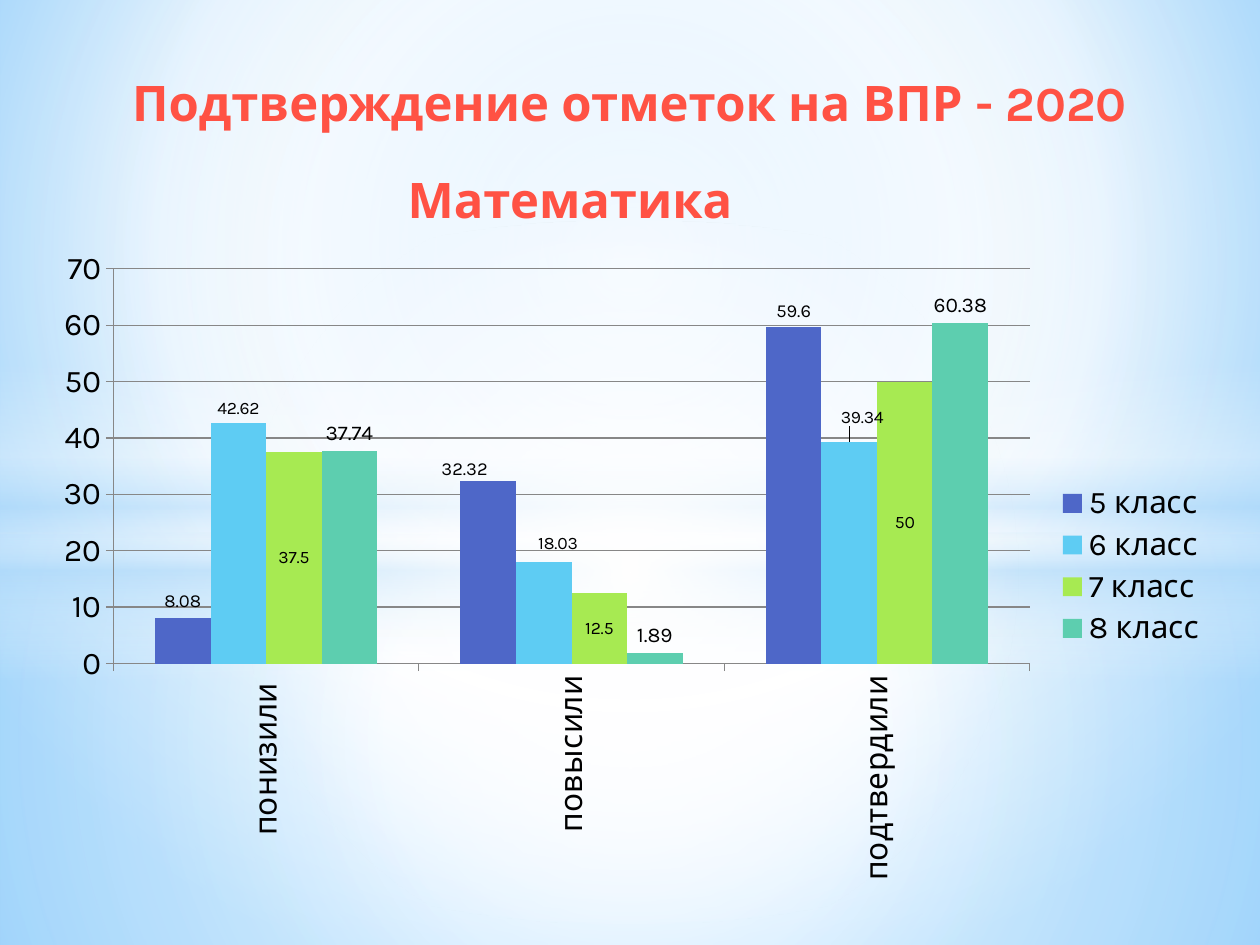
"""Build the slide on confirmed marks in mathematics, with a clustered column chart."""
from lxml import etree
from pptx import Presentation
from pptx.chart.data import CategoryChartData
from pptx.dml.color import RGBColor
from pptx.enum.chart import XL_CHART_TYPE, XL_LABEL_POSITION, XL_LEGEND_POSITION, XL_TICK_MARK
from pptx.enum.shapes import MSO_SHAPE
from pptx.enum.text import MSO_ANCHOR, MSO_AUTO_SIZE, PP_ALIGN
from pptx.oxml import parse_xml
from pptx.oxml.ns import nsdecls, qn
from pptx.util import Emu, Pt

RECT, OVAL = MSO_SHAPE.RECTANGLE, MSO_SHAPE.OVAL
ABOVE, CENTER = XL_LABEL_POSITION.OUTSIDE_END, XL_LABEL_POSITION.CENTER
COLUMNS, OUTSIDE = XL_CHART_TYPE.COLUMN_CLUSTERED, XL_TICK_MARK.OUTSIDE
FONT = "Karla"
HEADING = RGBColor(0xFF, 0x52, 0x44)
BLACK = RGBColor(0, 0, 0)
GRID = RGBColor(0x87, 0x87, 0x87)
INDIGO = RGBColor(0x4E, 0x67, 0xC8)
SKY = RGBColor(0x5E, 0xCC, 0xF3)
LIME = RGBColor(0xA7, 0xEA, 0x52)
TEAL = RGBColor(0x5D, 0xCE, 0xAF)
WHITE = RGBColor(0xFF, 0xFF, 0xFF)
PALE = RGBColor(0xB4, 0xDC, 0xFA)
LIGHT_BLUE = RGBColor(0x9E, 0xD5, 0xFF)
DEEP_BLUE = RGBColor(0x5B, 0xB9, 0xFF)

TITLE = ("Подтверждение отметок на ВПР - 2020", (84, 66, 1091, 72))
SUBJECT = ("Математика", (223, 163, 694, 72))
BACKDROP = [(0, LIGHT_BLUE, 100), (60, WHITE, 100), (100, DEEP_BLUE, 100)]
MIDDLE = (50, 50, 50, 50)
GLOWS = [
    (RECT, (0, 533, 1260, 412), [(0, WHITE, 91), (37, WHITE, 76), (100, PALE, 79)], MIDDLE),
    (RECT, (0, 0, 1260, 533), [(0, WHITE, 89), (48, WHITE, 62), (100, PALE, 79)], MIDDLE),
    (RECT, (0, 365, 1260, 315), [(0, WHITE, 0), (29, WHITE, 30), (45, PALE, 40),
                                 (55, WHITE, 26), (65, PALE, 60), (100, WHITE, 0)], None),
    (OVAL, (0, 221, 1260, 703), [(0, WHITE, 100), (54, WHITE, 0)], MIDDLE),
]
CHART_BOX = (39, 238, 1181, 656)
PLOT_BOX = (113, 269, 916, 395)
LEGEND_BOX = (1058, 480, 146, 172)
CATEGORIES = ["понизили ", "повысили", "подтвердили"]
SERIES = [
    ("5 класс", (8.08, 32.32, 59.6), INDIGO, 10.5, ABOVE, {1: (-24, 4)}),
    ("6 класс", (42.62, 18.03, 39.34), SKY, 10, ABOVE, {1: (14, -3), 2: (13, -10)}),
    ("7 класс", (37.5, 12.5, 50), LIME, 10, CENTER, {}),
    ("8 класс", (37.74, 1.89, 60.38), TEAL, 12, ABOVE, {}),
]


def emu(box):
    return [Emu(round(px * 914400 / 126)) for px in box]


def paint_gradient(fill, owner, stops, focus):
    fill.gradient()
    gradient = owner.xpath(".//a:gradFill")[0]
    stop_xml = "".join(
        f'<a:gs pos="{pos * 1000}"><a:srgbClr val="{color}">'
        f'<a:alpha val="{opacity * 1000}"/></a:srgbClr></a:gs>'
        for pos, color, opacity in stops)
    direction = '<a:lin ang="5400000" scaled="0"/>'
    if focus:
        sides = " ".join(f'{side}="{value * 1000}"' for side, value in zip("ltrb", focus))
        direction = f'<a:path path="circle"><a:fillToRect {sides}/></a:path>'
    gradient.getparent().replace(gradient, parse_xml(
        f'<a:gradFill {nsdecls("a")} rotWithShape="1">'
        f"<a:gsLst>{stop_xml}</a:gsLst>{direction}</a:gradFill>"))


def write_heading(heading, text, box):
    heading.left, heading.top, heading.width, heading.height = emu(box)
    frame = heading.text_frame
    frame.text = text
    frame.word_wrap = True
    frame.auto_size = MSO_AUTO_SIZE.NONE
    frame.vertical_anchor = MSO_ANCHOR.TOP
    paragraph = frame.paragraphs[0]
    paragraph.alignment = PP_ALIGN.CENTER
    font = paragraph.runs[0].font
    font.name, font.size, font.bold = FONT, Pt(28), True
    font.color.rgb = HEADING


def set_font(font, size):
    font.name, font.size, font.bold = FONT, Pt(size), False
    font.color.rgb = BLACK


def place(part, after, settings):
    for old in part.findall(qn("c:layout")):
        part.remove(old)
    layout = etree.Element(qn("c:layout"))
    manual = etree.SubElement(layout, qn("c:manualLayout"))
    for tag, value in settings.items():
        etree.SubElement(manual, qn(f"c:{tag}")).set("val", str(value))
    if after is None:
        part.insert(0, layout)
    else:
        after.addnext(layout)


def chart_share(box):
    left, top, width, height = CHART_BOX
    x, y, w, h = box
    shares = ((x - left) / width, (y - top) / height, w / width, h / height)
    return {"xMode": "edge", "yMode": "edge",
            **{tag: round(share, 3) for tag, share in zip("xywh", shares)}}


def format_series(series, color, size, position, shifts):
    series.format.fill.solid()
    series.format.fill.fore_color.rgb = color
    labels = series.data_labels
    labels.show_value = True
    labels.position = position
    set_font(labels.font, size)
    for index, (dx, dy) in shifts.items():
        label = series.points[index].data_label
        label.position = position
        set_font(label.font, size)
        marker = series._element.xpath(f"./c:dLbls/c:dLbl/c:idx[@val='{index}']")[0]
        place(marker.getparent(), marker,
              {"x": round(dx / CHART_BOX[2], 3), "y": round(dy / CHART_BOX[3], 3)})


def add_marks_chart(slide):
    data = CategoryChartData()
    data.categories = CATEGORIES
    for name, values, *_ in SERIES:
        data.add_series(name, values)
    chart = slide.shapes.add_chart(COLUMNS, *emu(CHART_BOX), data).chart
    chart.has_title = False
    set_font(chart.font, 18)
    plot = chart.plots[0]
    plot.gap_width, plot.overlap, plot.vary_by_categories = 150, 0, False
    for series, (_, _, *style) in zip(plot.series, SERIES):
        format_series(series, *style)
    for axis in (chart.category_axis, chart.value_axis):
        axis.major_tick_mark = OUTSIDE
        axis.format.line.color.rgb = GRID
        set_font(axis.tick_labels.font, 18)
    turned = chart.category_axis._element.xpath("./c:txPr/a:bodyPr")[0]
    turned.set("rot", "-5400000")
    turned.set("vert", "horz")
    scale = chart.value_axis
    scale.minimum_scale, scale.maximum_scale, scale.major_unit = 0, 70, 10
    scale.has_major_gridlines = True
    scale.major_gridlines.format.line.color.rgb = GRID
    chart.has_legend = True
    legend = chart.legend
    legend.position = XL_LEGEND_POSITION.RIGHT
    legend.include_in_layout = False
    set_font(legend.font, 18)
    place(legend._element, legend._element.find(qn("c:legendPos")), chart_share(LEGEND_BOX))
    area = chart._chartSpace.xpath("./c:chart/c:plotArea")[0]
    place(area, None, {"layoutTarget": "inner", **chart_share(PLOT_BOX)})


def main():
    deck = Presentation()
    deck.slide_width, deck.slide_height = emu((1260, 945))
    slide = deck.slides.add_slide(deck.slide_layouts[5])
    paint_gradient(slide.background.fill, slide.element, BACKDROP, (20, 10, 20, 60))
    for kind, box, stops, focus in GLOWS:
        glow = slide.shapes.add_shape(kind, *emu(box))
        glow.shadow.inherit = False
        glow.line.fill.background()
        paint_gradient(glow.fill, glow.element, stops, focus)
    title = slide.shapes.title
    slide.shapes._spTree.append(title.element)
    write_heading(title, *TITLE)
    add_marks_chart(slide)
    write_heading(slide.shapes.add_textbox(*emu(SUBJECT[1])), *SUBJECT)
    deck.save("out.pptx")


if __name__ == "__main__":
    main()
